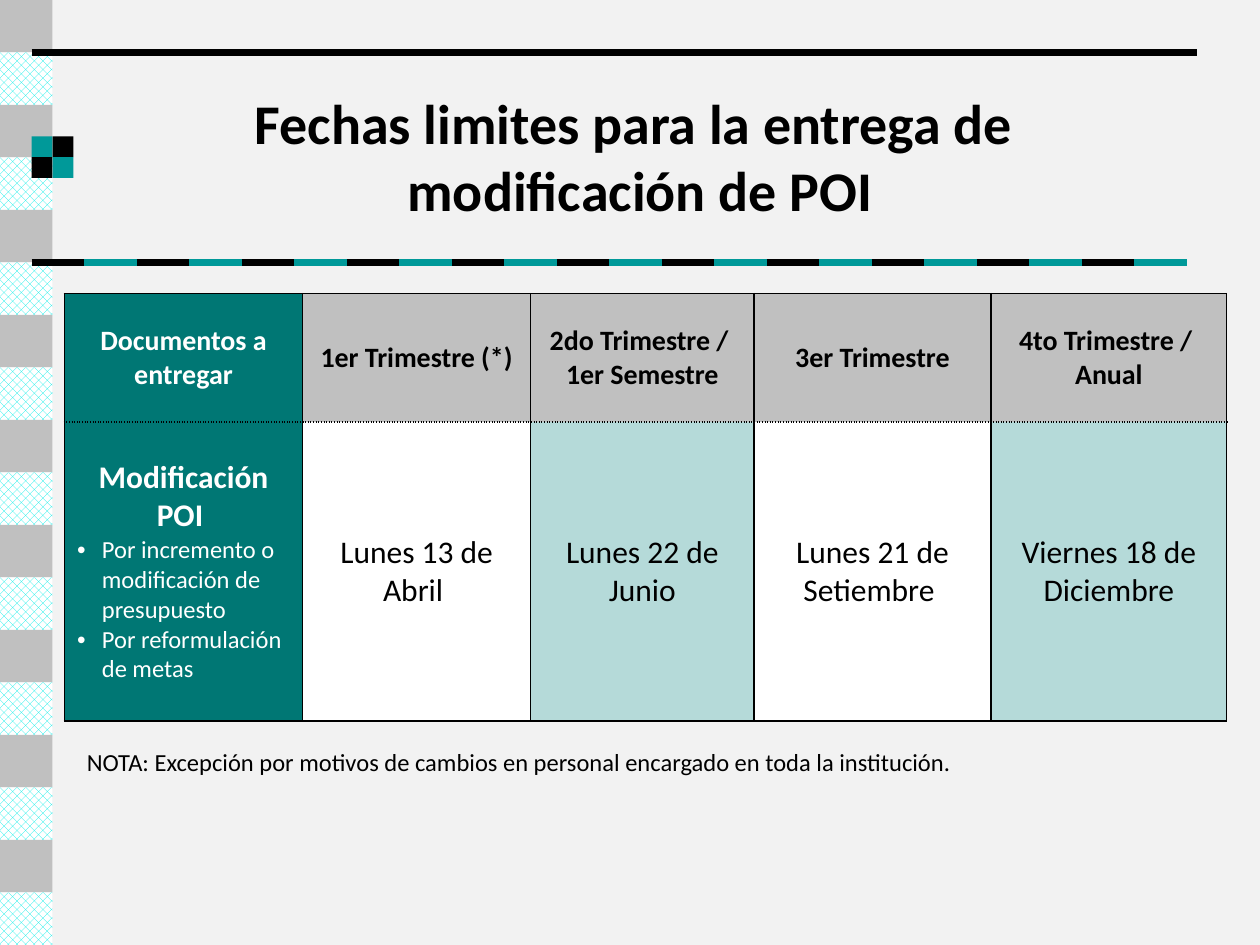
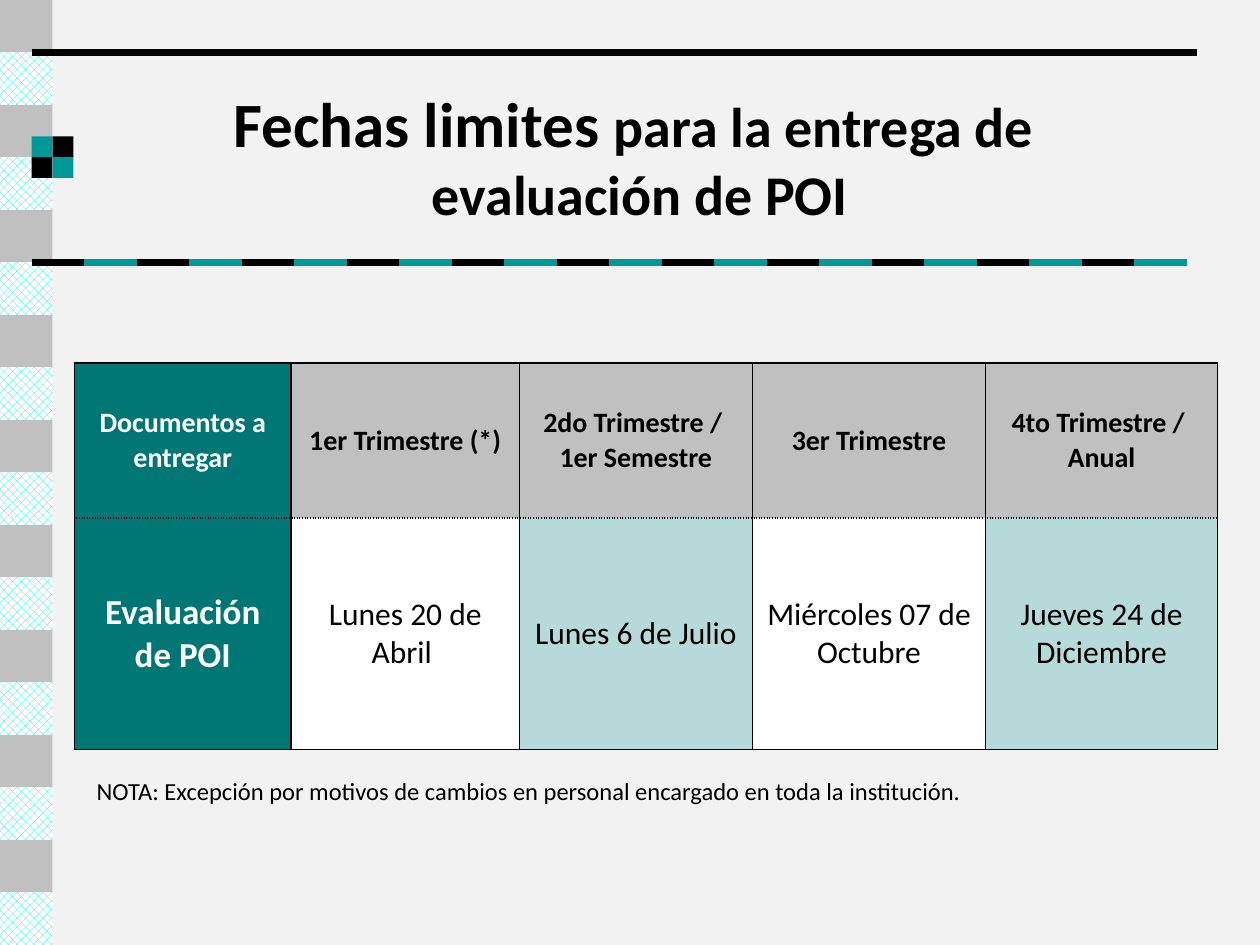
"""Build two slides with the deadlines for changing and evaluating the POI."""
from lxml import etree
from pptx import Presentation
from pptx.dml.color import RGBColor
from pptx.enum.dml import MSO_PATTERN
from pptx.enum.shapes import MSO_CONNECTOR, MSO_SHAPE
from pptx.enum.text import MSO_ANCHOR, MSO_AUTO_SIZE, PP_ALIGN
from pptx.oxml.ns import qn
from pptx.util import Cm, Pt

RECTANGLE = MSO_SHAPE.RECTANGLE
STRAIGHT = MSO_CONNECTOR.STRAIGHT
HALF_DOTS = MSO_PATTERN.PERCENT_50
MIDDLE = MSO_ANCHOR.MIDDLE
FIT_SHAPE = MSO_AUTO_SIZE.SHAPE_TO_FIT_TEXT
LEFT, CENTER = PP_ALIGN.LEFT, PP_ALIGN.CENTER

FONT = "Calibri"
BLACK, WHITE, PAPER, GRAY = "000000", "FFFFFF", "F2F2F2", "C0C0C0"
TEAL, DARK_TEAL, PALE_TEAL, AQUA = "009999", "007774", "B5DAD9", "00EEE8"

SLIDE_WIDTH, SLIDE_HEIGHT = 25.4, 19.05
BAND_SQUARES = 18
SQUARE = SLIDE_HEIGHT / BAND_SQUARES
RULE_LEFT, RULE_RIGHT = 0.64, 24.13
RULE_DASHES = 22

HEADINGS = ["Documentos a entregar", "1er Trimestre (*)",
            "2do Trimestre / \n1er Semestre", "3er Trimestre",
            "4to Trimestre / \nAnual"]
NOTE = ("NOTA: Excepción por motivos de cambios en personal encargado "
        "en toda la institución.")


def color(hex_code):
    """Turn a hex string into a colour."""
    return RGBColor.from_string(hex_code)


def paint(fill, hex_code):
    """Give a fill one solid colour."""
    fill.solid()
    fill.fore_color.rgb = color(hex_code)


def add_bullet(para):
    """Give a paragraph a round bullet with a hanging indent."""
    properties = para._p.get_or_add_pPr()
    properties.set("marL", str(Cm(0.5)))
    properties.set("indent", str(-Cm(0.5)))
    etree.SubElement(properties, qn("a:buFont"), typeface="Arial")
    etree.SubElement(properties, qn("a:buChar"), char="•")


def write(frame, text, size=18, ink=BLACK, bold=False, align=CENTER,
          bullet=False, join=False):
    """Add one paragraph per line of text, or join the last paragraph."""
    for line in text.split("\n"):
        para = frame.paragraphs[-1]
        if para.runs and not join:
            para = frame.add_paragraph()
        join = False
        para.alignment = align
        if bullet:
            add_bullet(para)
        span = para.add_run()
        span.text = line
        span.font.name = FONT
        span.font.size = Pt(size)
        span.font.bold = bold
        span.font.color.rgb = color(ink)


def add_square(slide, left, top, side, hex_code=None):
    """Add a solid square, or a dotted one when no colour is given."""
    square = slide.shapes.add_shape(
        RECTANGLE, Cm(left), Cm(top), Cm(side), Cm(side))
    square.shadow.inherit = False
    square.line.fill.background()
    if hex_code:
        paint(square.fill, hex_code)
    else:
        square.fill.patterned()
        square.fill.pattern = HALF_DOTS
        square.fill.fore_color.rgb = color(AQUA)
        square.fill.back_color.rgb = color(WHITE)


def add_rule(slide, left, right, top, hex_code):
    """Add a thick horizontal line."""
    rule = slide.shapes.add_connector(
        STRAIGHT, Cm(left), Cm(top), Cm(right), Cm(top))
    rule.line.width = Pt(4.5)
    rule.line.color.rgb = color(hex_code)
    etree.SubElement(rule._element.spPr, qn("a:effectLst"))


def add_decor(slide):
    """Add the side band, the two rules and the small checkerboard."""
    for index in range(BAND_SQUARES):
        add_square(slide, 0, index * SQUARE, SQUARE,
                   None if index % 2 else GRAY)
    add_rule(slide, RULE_LEFT, RULE_RIGHT, SQUARE, BLACK)
    tile = 0.42
    for row in range(2):
        for column in range(2):
            add_square(slide, RULE_LEFT + column * tile, 2.75 + row * tile,
                       tile, TEAL if row == column else BLACK)
    for index in range(RULE_DASHES):
        left = RULE_LEFT + index * SQUARE
        add_rule(slide, left, left + SQUARE, 5 * SQUARE,
                 TEAL if index % 2 else BLACK)


def add_text_box(slide, left, top, width, height):
    """Add a wrapping text box and return its frame."""
    box = slide.shapes.add_textbox(Cm(left), Cm(top), Cm(width), Cm(height))
    box.text_frame.word_wrap = True
    return box.text_frame


def add_title(slide, opening, opening_size, rest):
    """Add the two-line title, whose opening may be larger."""
    frame = add_text_box(slide, 1.12, 1.55, 23.57, 3.18)
    frame.vertical_anchor = MIDDLE
    write(frame, opening, size=opening_size, bold=True)
    write(frame, rest, size=32, bold=True, join=True)


def add_note(slide, left, top):
    """Add the note under the table."""
    frame = add_text_box(slide, left, top, 22.6, 0.86)
    frame.auto_size = FIT_SHAPE
    write(frame, NOTE, size=14, align=LEFT)


def add_borders(cell, dotted_side):
    """Draw thin black borders around a cell, one of them dotted."""
    properties = cell._tc.get_or_add_tcPr()
    for side in ("lnL", "lnR", "lnT", "lnB"):
        border = etree.SubElement(properties, qn(f"a:{side}"), w=str(Pt(1)))
        fill = etree.SubElement(border, qn("a:solidFill"))
        etree.SubElement(fill, qn("a:srgbClr"), val=BLACK)
        dash = "dot" if side == dotted_side else "solid"
        etree.SubElement(border, qn("a:prstDash"), val=dash)


def style_cell(cell, hex_code, dotted_side):
    """Set the borders, fill and anchor of a cell and return its frame."""
    add_borders(cell, dotted_side)
    paint(cell.fill, hex_code)
    cell.vertical_anchor = MIDDLE
    return cell.text_frame


def add_schedule(slide, left, top, widths, heights, document, dates):
    """Add the table of deadlines; document holds text and format pairs."""
    table = slide.shapes.add_table(
        len(heights), len(widths), Cm(left), Cm(top),
        Cm(sum(widths)), Cm(sum(heights))).table
    table.first_row = table.horz_banding = False
    for column, width in zip(table.columns, widths):
        column.width = Cm(width)
    for row, height in zip(table.rows, heights):
        row.height = Cm(height)
    for index, heading in enumerate(HEADINGS):
        frame = style_cell(table.cell(0, index),
                           GRAY if index else DARK_TEAL, "lnB")
        write(frame, heading, size=16, bold=True,
              ink=BLACK if index else WHITE)
    frame = style_cell(table.cell(1, 0), DARK_TEAL, "lnT")
    for text, text_format in document:
        write(frame, text, ink=WHITE, **text_format)
    for index, date in enumerate(dates, start=1):
        frame = style_cell(table.cell(1, index),
                           WHITE if index % 2 else PALE_TEAL, "lnT")
        write(frame, date)


def add_slide(deck):
    """Add a blank slide with the shared decoration."""
    slide = deck.slides.add_slide(deck.slide_layouts[6])
    paint(slide.background.fill, PAPER)
    add_decor(slide)
    return slide


def add_modification_slide(deck):
    """Add the slide with the deadlines for changes."""
    slide = add_slide(deck)
    reasons = ("Por incremento o modificación de presupuesto\n"
               "Por reformulación de metas")
    add_schedule(
        slide, 1.3, 5.92, [4.8, 4.6, 4.5, 4.78, 4.75], [2.59, 6.02],
        [("Modificación POI ", {"bold": True}),
         (reasons, {"size": 14, "align": LEFT, "bullet": True})],
        ["Lunes 13 de Abril ", "Lunes 22 de Junio",
         "Lunes 21 de Setiembre ", "Viernes 18 de Diciembre"])
    add_title(slide, "Fechas limites ", 32,
              "para la entrega de \nmodificación de POI")
    add_note(slide, 1.5, 14.94)


def add_evaluation_slide(deck):
    """Add the slide with the deadlines for evaluation."""
    slide = add_slide(deck)
    add_schedule(
        slide, 1.5, 7.32, [4.37, 4.6, 4.7, 4.7, 4.67], [3.12, 4.67],
        [("Evaluación de POI", {"size": 20, "bold": True})],
        ["Lunes 20 de Abril ", "Lunes 6 de Julio",
         "Miércoles 07 de Octubre", "Jueves 24 de Diciembre"])
    add_title(slide, "Fechas limites ", 36,
              "para la entrega de \nevaluación de POI")
    add_note(slide, 1.7, 15.52)


def main():
    """Build the deck and save it."""
    deck = Presentation()
    deck.slide_width, deck.slide_height = Cm(SLIDE_WIDTH), Cm(SLIDE_HEIGHT)
    add_modification_slide(deck)
    add_evaluation_slide(deck)
    deck.save("out.pptx")


if __name__ == "__main__":
    main()
